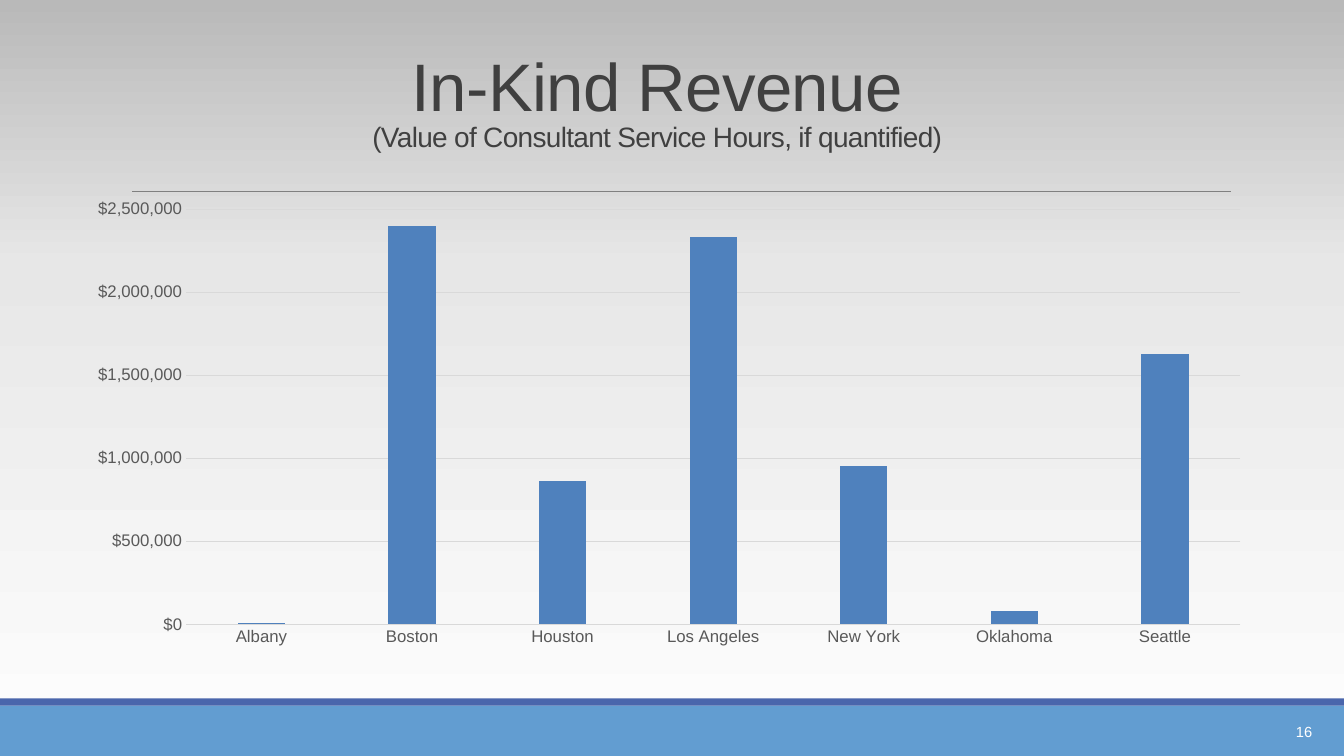
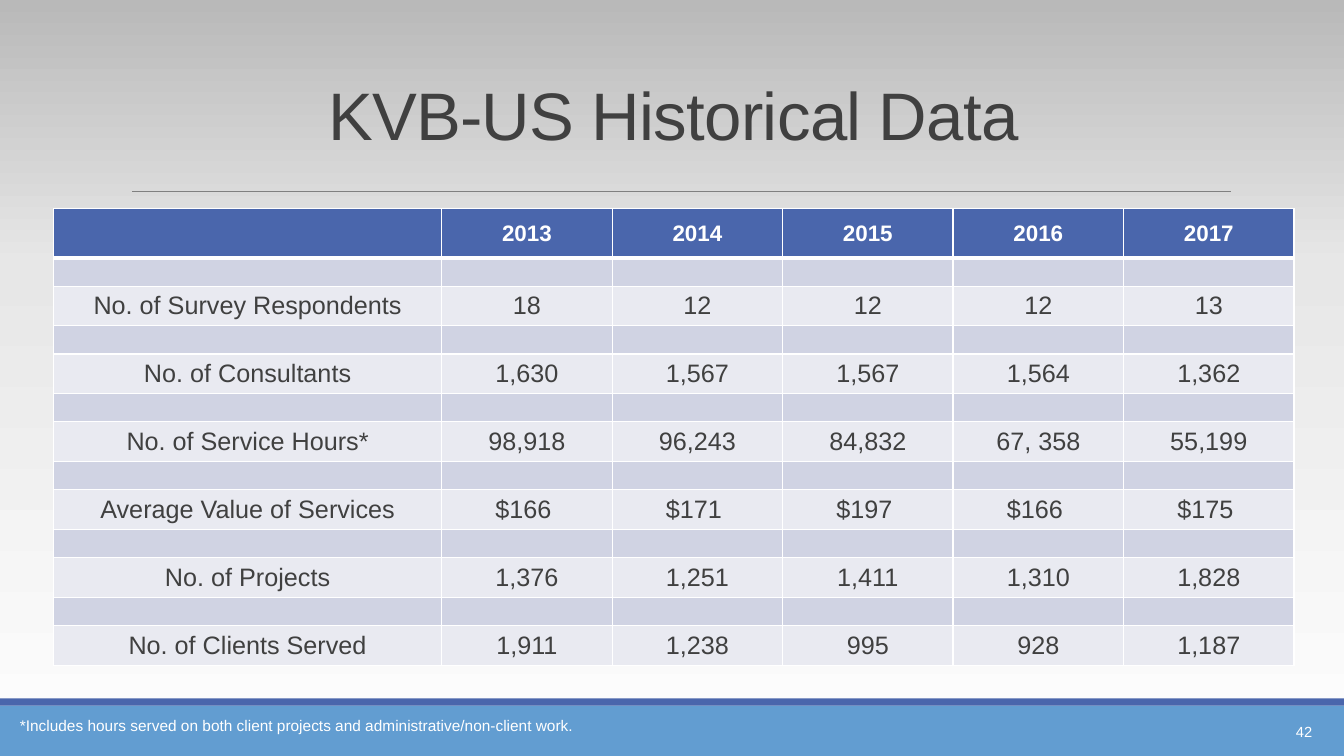
from collections import namedtuple
from copy import deepcopy
from dataclasses import dataclass

from lxml import etree
from pptx import Presentation
from pptx.chart.data import CategoryChartData
from pptx.dml.color import RGBColor
from pptx.enum.chart import XL_CHART_TYPE, XL_TICK_MARK
from pptx.enum.shapes import MSO_CONNECTOR, MSO_SHAPE
from pptx.enum.text import MSO_ANCHOR, MSO_AUTO_SIZE, PP_ALIGN
from pptx.oxml.ns import qn
from pptx.util import Cm, Pt

COLUMN = XL_CHART_TYPE.COLUMN_CLUSTERED
NO_TICK = XL_TICK_MARK.NONE
STRAIGHT = MSO_CONNECTOR.STRAIGHT
RECT = MSO_SHAPE.RECTANGLE
TOP, MIDDLE, BOTTOM = MSO_ANCHOR.TOP, MSO_ANCHOR.MIDDLE, MSO_ANCHOR.BOTTOM
LEFT, CENTER, RIGHT = PP_ALIGN.LEFT, PP_ALIGN.CENTER, PP_ALIGN.RIGHT
NO_FIT = MSO_AUTO_SIZE.NONE

Box = namedtuple("Box", "left top width height")


@dataclass(frozen=True)
class Theme:
    """Colours and type sizes of the deck."""
    font: str = "Arial"
    ink: str = "404040"
    white: str = "FFFFFF"
    black: str = "000000"
    band: str = "629DD1"
    strip: str = "4A66AC"
    rule: str = "808080"
    bar: str = "4F81BD"
    label: str = "595959"
    grid: str = "D9D9D9"
    gap: str = "D0D3E3"
    row: str = "E9EAF1"
    back: tuple = ((0, "FEFEFE"), (0.65, "E7E7E7"), (1, "B9B9B9"))
    title: float = 48
    sub: float = 20
    body: float = 18
    head: float = 16
    axis: float = 12
    chart: float = 10
    note: float = 11
    page: float = 10.5


THEME = Theme()
WIDE, HIGH = 33.87, 19.05
FOOT = Box(0, 17.6, WIDE, 1.45)
STRIP = 0.18

CITIES = {
    "Albany": 10000, "Boston": 2400000, "Houston": 860000,
    "Los Angeles": 2330000, "New York": 950000, "Oklahoma": 80000,
    "Seattle": 1630000,
}
YEARS = ["", "2013", "2014", "2015", "2016", "2017"]
FACTS = [
    ["No. of Survey Respondents", "18", "12", "12", "12", "13"],
    ["No. of Consultants", "1,630", "1,567", "1,567", "1,564", "1,362"],
    ["No. of Service Hours*", "98,918", "96,243", "84,832", "67, 358", "55,199"],
    ["Average Value of Services", "$166 ", "$171 ", "$197 ", "$166 ", "$175 "],
    ["No. of Projects", "1,376", "1,251", "1,411", "1,310", "1,828"],
    ["No. of Clients Served", "1,911", "1,238", "995", "928", "1,187"],
]


def tint(code):
    """Return the colour for a hex code."""
    return RGBColor.from_string(code)


def place(box):
    """Return the sides of a box as lengths."""
    return [Cm(side) for side in box]


def style(font, size, color, bold=False):
    """Set face, size and colour of a font."""
    font.name = THEME.font
    font.size = Pt(size)
    font.bold = bold
    font.color.rgb = tint(color)


def block(slide, box, color):
    """Add a plain filled bar."""
    bar = slide.shapes.add_shape(RECT, *place(box))
    bar.shadow.inherit = False
    bar.fill.solid()
    bar.fill.fore_color.rgb = tint(color)
    bar.line.fill.background()
    return bar


def rule(slide, left, right, top):
    """Add the thin line below the title."""
    line = slide.shapes.add_connector(
        STRAIGHT, Cm(left), Cm(top), Cm(right), Cm(top))
    line.line.color.rgb = tint(THEME.rule)
    line.line.width = Pt(0.5)
    etree.SubElement(line.element.spPr, qn("a:effectLst"))
    return line


def dress(master, slide):
    """Give the master its backdrop, bands and rule."""
    fill = master.background.fill
    fill.gradient()
    fill.gradient_angle = 90
    stops = next(master.element.iter(qn("a:gsLst")))
    stops.append(deepcopy(stops[0]))
    for stop, (spot, color) in zip(fill.gradient_stops, THEME.back):
        stop.position = spot
        stop.color.rgb = tint(color)
    left, top, width, height = FOOT
    parts = [
        block(slide, Box(left, top + STRIP, width, height - STRIP), THEME.band),
        block(slide, Box(left, top, width, STRIP), THEME.strip),
        rule(slide, 3.33, 31.01, 4.83),
    ]
    for mark, part in enumerate(parts, 20):
        next(part.element.iter(qn("p:cNvPr"))).set("id", str(mark))
        master.shapes.element.append(part.element)


def head(slide, box, lines, anchor):
    """Fill the title with lines of text and size."""
    title = slide.shapes.title
    title.left, title.top, title.width, title.height = place(box)
    frame = title.text_frame
    frame.auto_size = NO_FIT
    frame.word_wrap = True
    frame.vertical_anchor = anchor
    para = frame.paragraphs[0]
    para.alignment = CENTER
    para.line_spacing = 0.85
    for count, (text, size) in enumerate(lines):
        if count:
            para.add_line_break()
        run = para.add_run()
        run.text = text
        style(run.font, size, THEME.ink)
    for prop in title.element.iter(qn("a:rPr")):
        prop.set("spc", "-50")


def note(slide, box, text, size, align, anchor):
    """Add a white line of text in the footer."""
    frame = slide.shapes.add_textbox(*place(box)).text_frame
    frame.word_wrap = True
    frame.vertical_anchor = anchor
    para = frame.paragraphs[0]
    para.text = text
    para.alignment = align
    style(para.font, size, THEME.white)


def page(slide, text):
    """Add the page number to the footer."""
    box = Box(WIDE - 4.18, FOOT.top + 0.33, 3.63, 1.02)
    note(slide, box, text, THEME.page, RIGHT, MIDDLE)


def graph(slide, box):
    """Add the column chart of revenue by city."""
    data = CategoryChartData()
    data.categories = list(CITIES)
    data.add_series("Series 1", list(CITIES.values()))
    chart = slide.shapes.add_chart(COLUMN, *place(box), data).chart
    chart.has_title = False
    chart.has_legend = False
    style(chart.font, THEME.chart, THEME.black)
    plot = chart.plots[0]
    plot.vary_by_categories = False
    plot.gap_width = 219
    plot.overlap = -27
    fill = plot.series[0].format.fill
    fill.solid()
    fill.fore_color.rgb = tint(THEME.bar)
    cats, vals = chart.category_axis, chart.value_axis
    for axis in (cats, vals):
        axis.major_tick_mark = axis.minor_tick_mark = NO_TICK
        style(axis.tick_labels.font, THEME.axis, THEME.label)
    vals.minimum_scale, vals.maximum_scale = 0, 2500000
    vals.major_unit = 500000
    vals.tick_labels.number_format = '"$"#,##0'
    vals.tick_labels.number_format_is_linked = False
    vals.format.line.fill.background()
    for line in (cats.format.line, vals.major_gridlines.format.line):
        line.color.rgb = tint(THEME.grid)
        line.width = Pt(0.75)
    inset(chart, {"x": 0.136, "y": 0.034, "w": 0.864, "h": 0.848})


def inset(chart, sides):
    """Fix the inner plot area as shares of the chart."""
    area = next(chart.element.iter(qn("c:plotArea")))
    for old in area.findall(qn("c:layout")):
        area.remove(old)
    layout = etree.Element(qn("c:layout"))
    area.insert(0, layout)
    manual = etree.SubElement(layout, qn("c:manualLayout"))
    modes = {"layoutTarget": "inner", "xMode": "edge", "yMode": "edge"}
    for name, val in {**modes, **sides}.items():
        etree.SubElement(manual, qn("c:" + name), val=str(val))


def edge(cell, base):
    """Draw white borders round a table cell."""
    prop = cell.find(qn("a:tcPr"))
    widths = {"lnL": 1, "lnR": 1, "lnT": 1, "lnB": base}
    for spot, (name, width) in enumerate(widths.items()):
        line = etree.Element(qn("a:" + name), w=str(Pt(width)))
        fill = etree.SubElement(line, qn("a:solidFill"))
        etree.SubElement(fill, qn("a:srgbClr"), val=THEME.white)
        prop.insert(spot, line)


def write(cell, text, size, color, bold):
    """Set the centred text of a table cell."""
    para = cell.text_frame.paragraphs[0]
    para.text = text
    para.alignment = CENTER
    style(para.font, size, color, bold)


def grid(slide, box):
    """Add the table of yearly facts with spacer rows."""
    rows = [YEARS]
    for fact in FACTS:
        rows += [[""] * len(YEARS), fact]
    frame = slide.shapes.add_table(len(rows), len(YEARS), *place(box))
    table = frame.table
    first = 9.78
    for spot, col in enumerate(table.columns):
        rest = (box.width - first) / (len(YEARS) - 1)
        col.width = Cm(rest if spot else first)
    for down, texts in enumerate(rows):
        fill, high = (THEME.gap, 0.71) if down % 2 else (THEME.row, 1)
        size, color = THEME.body, THEME.ink
        if not down:
            fill, high = THEME.strip, 1.24
            size, color = THEME.head, THEME.white
        table.rows[down].height = Cm(high)
        for across, text in enumerate(texts):
            cell = table.cell(down, across)
            cell.fill.solid()
            cell.fill.fore_color.rgb = tint(fill)
            cell.vertical_anchor = MIDDLE
            cell.margin_left = cell.margin_right = 0
            cell.margin_top = cell.margin_bottom = 0
            if text:
                write(cell, text, size, color, not down)
    for spot, cell in enumerate(frame.element.iter(qn("a:tc"))):
        edge(cell, 3 if spot < len(YEARS) else 1)
        if not "".join(cell.itertext()).strip():
            para = next(cell.iter(qn("a:p")))
            etree.SubElement(para, qn("a:endParaRPr"), sz="800")


def money(slide):
    """Build the revenue slide."""
    lines = [
        ("In-Kind Revenue", THEME.title),
        ("(Value of Consultant Service Hours, if quantified)", THEME.sub),
    ]
    head(slide, Box(3.43, 1.3, 26.26, 2.69), lines, MIDDLE)
    page(slide, "16")
    graph(slide, Box(0.51, 4.85, 30.76, 12.34))


def past(slide):
    """Build the slide of historical data."""
    lines = [("KVB-US Historical Data", THEME.title)]
    head(slide, Box(3.84, 1.65, 26.26, 2.36), lines, BOTTOM)
    page(slide, "42")
    grid(slide, Box(1.35, 5.26, 31.26, 11.5))
    text = ("*Includes hours served on both client projects and "
            "administrative/non-client work.")
    box = Box(0.25, FOOT.top + 0.33, 16.71, 0.74)
    note(slide, box, text, THEME.note, LEFT, TOP)


def main():
    """Build and save the deck."""
    deck = Presentation()
    deck.slide_width, deck.slide_height = Cm(WIDE), Cm(HIGH)
    layout = deck.slide_layouts.get_by_name("Title Only")
    slides = [deck.slides.add_slide(layout) for _ in range(2)]
    dress(deck.slide_master, slides[0])
    for build, slide in zip((money, past), slides):
        build(slide)
    deck.save("out.pptx")


if __name__ == "__main__":
    main()
